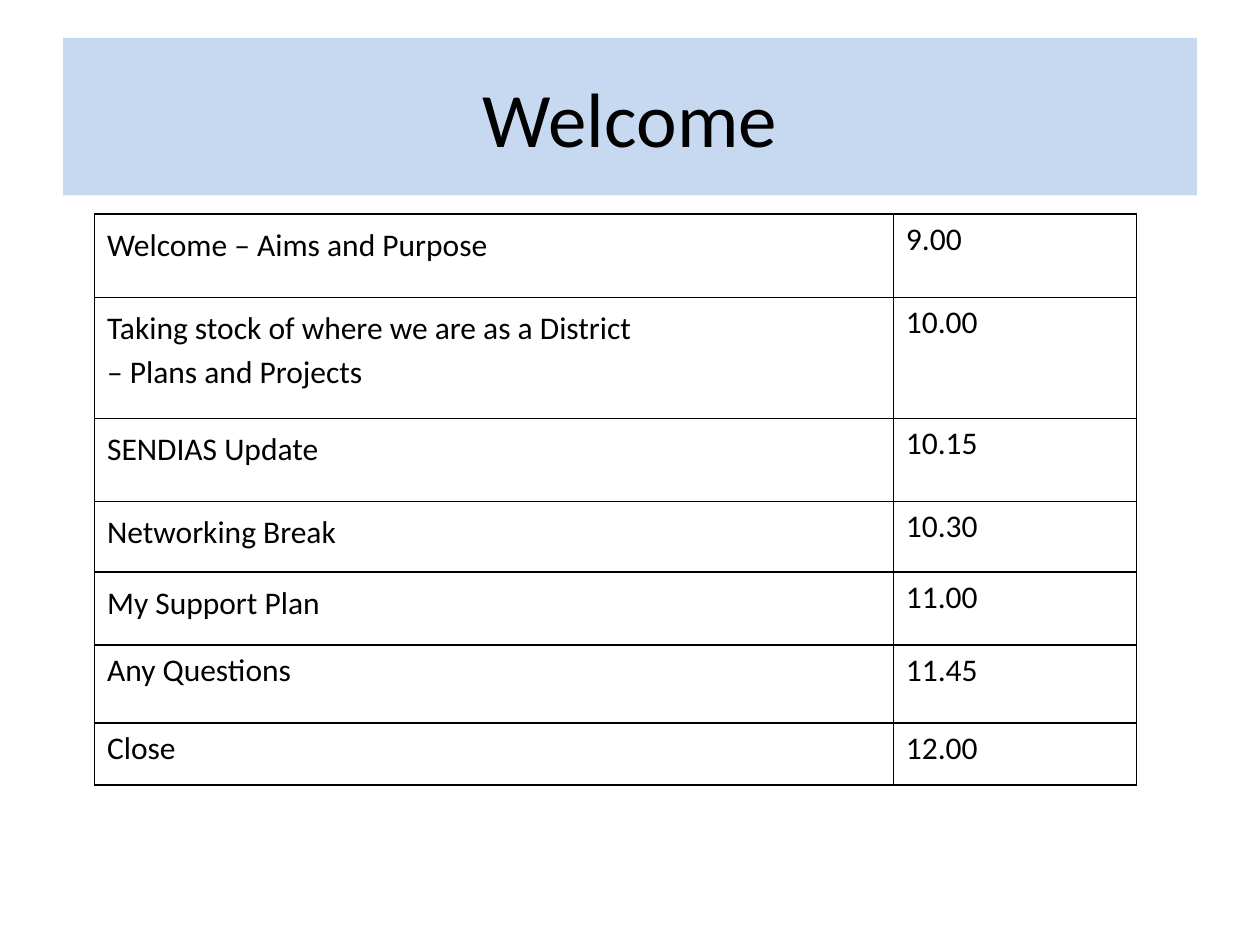
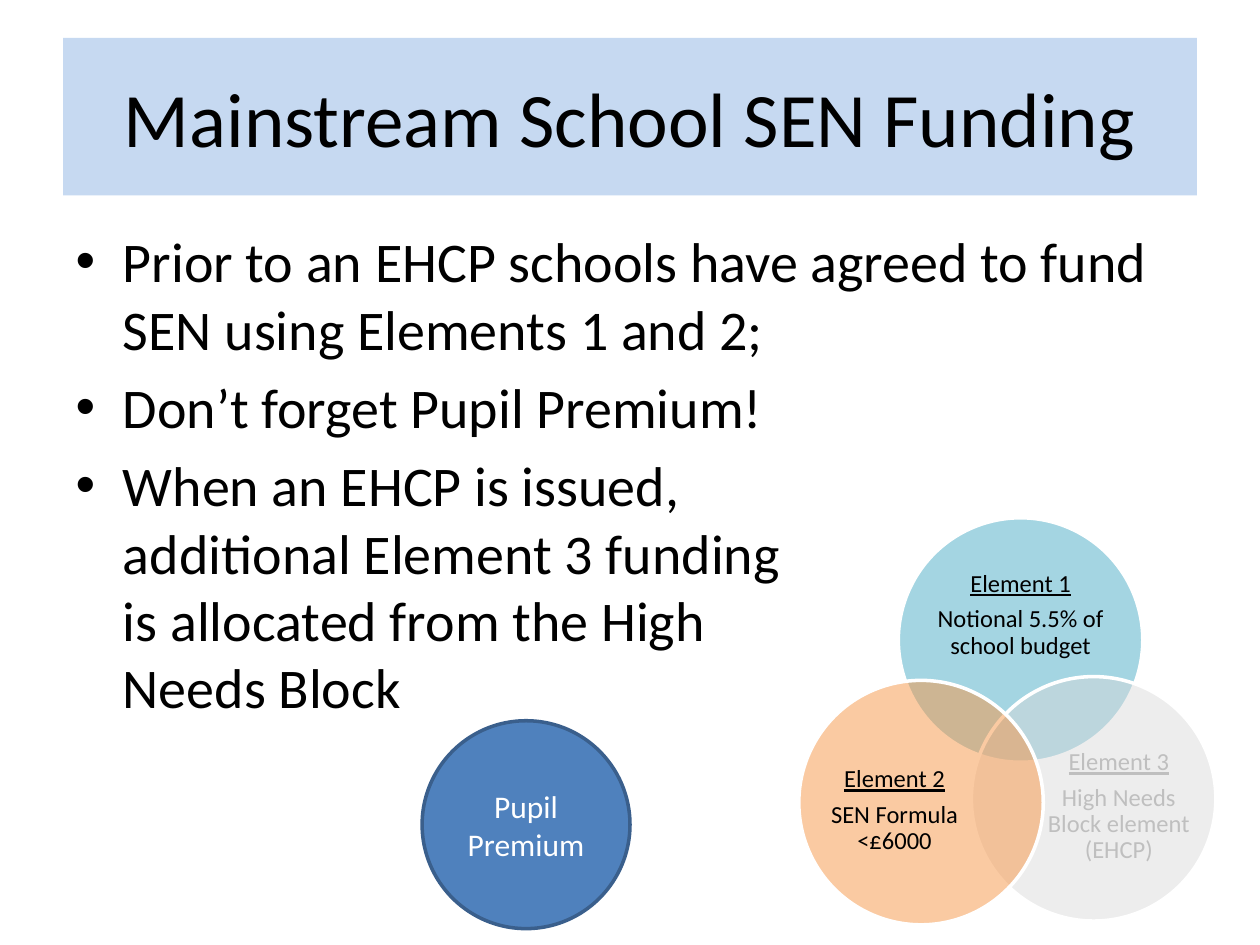
"""Build the welcome agenda and the school funding slide."""
from dataclasses import dataclass
from lxml.etree import SubElement
from pptx import Presentation
from pptx.dml.color import RGBColor as RGB
from pptx.enum.shapes import MSO_SHAPE as SHAPE
from pptx.enum.text import MSO_ANCHOR as ANCHOR, PP_ALIGN as ALIGN
from pptx.oxml.ns import qn
from pptx.util import Inches, Pt

AGENDA = [
    (["Welcome – Aims and Purpose"], "9.00", 0.66, 1.15),
    (["Taking stock of where we are as a District", "– Plans and Projects"],
     "10.00", 0.96, 1.15),
    (["SENDIAS Update"], "10.15", 0.66, 1.15),
    (["Networking Break"], "10.30", 0.56, 1.15),
    (["My Support Plan"], "11.00", 0.58, 1.15),
    (["Any Questions"], "11.45", 0.62, 1),
    (["Close"], "12.00", 0.49, 1),
]
POINTS = [
    ["Prior to an EHCP schools have agreed to fund SEN using Elements 1 and 2;"],
    ["Don’t forget Pupil Premium!"],
    ["When an EHCP is issued,", "additional Element 3 funding",
     "is allocated from the High", "Needs Block"],
]


@dataclass(frozen=True)
class Theme:
    """Colours and type sizes."""
    font: str = "Calibri"
    ink: str = "000000"
    paper: str = "FFFFFF"
    band: str = "C6D9F1"
    blue: str = "4F81BD"
    edge: str = "3A5F8C"
    teal: str = "4BACC6"
    grey: str = "D9D9D9"
    faint: str = "BFBFBF"
    orange: str = "F79646"
    title: int = 44
    body: int = 32
    text: int = 18
    label: int = 14


T = Theme()
VENN = [
    ("Element 1", "Notional 5.5% of school budget", T.teal, 50, T.ink,
     (7.13, 4.11), (7.39, 4.45, 1.42, 0.87)),
    ("Element 3", "High Needs Block element (EHCP)", T.grey, 47, T.faint,
     (7.71, 5.37), (8.3, 5.87, 1.16, 1.07)),
    ("Element 2", "SEN Formula <£6000", T.orange, 50, T.ink,
     (6.34, 5.4), (6.52, 5.9, 1.16, 1.07)),
]


def inch(*nums):
    """Turn numbers into lengths."""
    return [Inches(n) for n in nums]


def place(shape, *box):
    """Move and size a shape."""
    shape.left, shape.top, shape.width, shape.height = inch(*box)


def style(frame, size, color=T.ink, align=None, space=None):
    """Format all text in a frame."""
    for para in frame.paragraphs:
        para.alignment = align
        if space:
            para.line_spacing = space
        for run in para.runs:
            run.font.name, run.font.size = T.font, Pt(size)
            run.font.color.rgb = RGB.from_string(color)


def paint(fill, color):
    """Fill with one colour."""
    fill.solid()
    fill.fore_color.rgb = RGB.from_string(color)


def start(deck, layout, title):
    """Add a slide with its banded title."""
    slide = deck.slides.add_slide(deck.slide_layouts[layout])
    head = slide.shapes.title
    place(head, 0.5, 0.3, 9, 1.25)
    paint(head.fill, T.band)
    head.text_frame.text = title
    head.text_frame.vertical_anchor = ANCHOR.MIDDLE
    style(head.text_frame, T.title, align=ALIGN.CENTER)
    return slide


def border(cell):
    """Draw a thin line on each side of a cell."""
    props = cell._tc.get_or_add_tcPr()
    for spot, side in enumerate(("a:lnL", "a:lnR", "a:lnT", "a:lnB")):
        line = SubElement(props, qn(side), w=str(Pt(1)))
        props.insert(spot, line)
        fill = SubElement(line, qn("a:solidFill"))
        SubElement(fill, qn("a:srgbClr"), val=T.ink)


def agenda(slide):
    """Add the table of items and times."""
    highs = [row[2] for row in AGENDA]
    wides = (6.34, 1.93)
    box = inch(0.75, 1.7, sum(wides), sum(highs))
    table = slide.shapes.add_table(len(AGENDA), 2, *box).table
    table.first_row = table.horz_banding = False
    for col, wide in zip(table.columns, wides):
        col.width = Inches(wide)
    for num, (lines, time, high, space) in enumerate(AGENDA):
        table.rows[num].height = Inches(high)
        for col, (words, gap) in enumerate((("\n".join(lines), space), (time, 1))):
            cell = table.cell(num, col)
            cell.text_frame.text = words
            style(cell.text_frame, T.text, space=gap)
            cell.fill.background()
            border(cell)


def circle(slide, left, top, size, color, edge, alpha=None):
    """Add a circle, see-through if alpha is given."""
    disc = slide.shapes.add_shape(SHAPE.OVAL, *inch(left, top, size, size))
    disc.shadow.inherit = False
    paint(disc.fill, color)
    if alpha:
        tint = disc._element.spPr.find(".//" + qn("a:srgbClr"))
        SubElement(tint, qn("a:alpha"), val=str(alpha * 1000))
    disc.line.color.rgb = RGB.from_string(edge)
    disc.line.width = Pt(2)
    return disc


def label(slide, head, note, color, box):
    """Add an underlined heading with a note below it."""
    frame = slide.shapes.add_textbox(*inch(*box)).text_frame
    frame.word_wrap = True
    frame.vertical_anchor = ANCHOR.MIDDLE
    frame.margin_left = frame.margin_right = 0
    frame.margin_top = frame.margin_bottom = 0
    frame.text = f"{head}\n{note}"
    style(frame, T.label, color, ALIGN.CENTER, 0.9)
    for para in frame.paragraphs:
        para.space_after = Pt(0.35 * T.label)
    frame.paragraphs[0].runs[0].font.underline = True


def funding(slide):
    """Add the bullet list and the circles."""
    body = slide.placeholders[1]
    place(body, 0.5, 1.75, 9, 4.95)
    body.text_frame.text = "\n".join("\v".join(lines) for lines in POINTS)
    style(body.text_frame, T.body)
    body.text_frame.paragraphs[0].space_before = Pt(0)
    disc = circle(slide, 3.35, 5.72, 1.65, T.blue, T.edge)
    disc.text_frame.text = "Pupil Premium"
    disc.text_frame.vertical_anchor = ANCHOR.MIDDLE
    style(disc.text_frame, T.text, T.paper, ALIGN.CENTER)
    for head, note, color, alpha, ink, spot, box in VENN:
        circle(slide, *spot, 1.94, color, T.paper, alpha)
        label(slide, head, note, ink, box)


def main():
    """Build and save the deck."""
    deck = Presentation()
    deck.slide_width, deck.slide_height = inch(10, 7.5)
    agenda(start(deck, 5, "Welcome"))
    funding(start(deck, 1, "Mainstream School SEN Funding"))
    deck.save("out.pptx")


if __name__ == "__main__":
    main()
